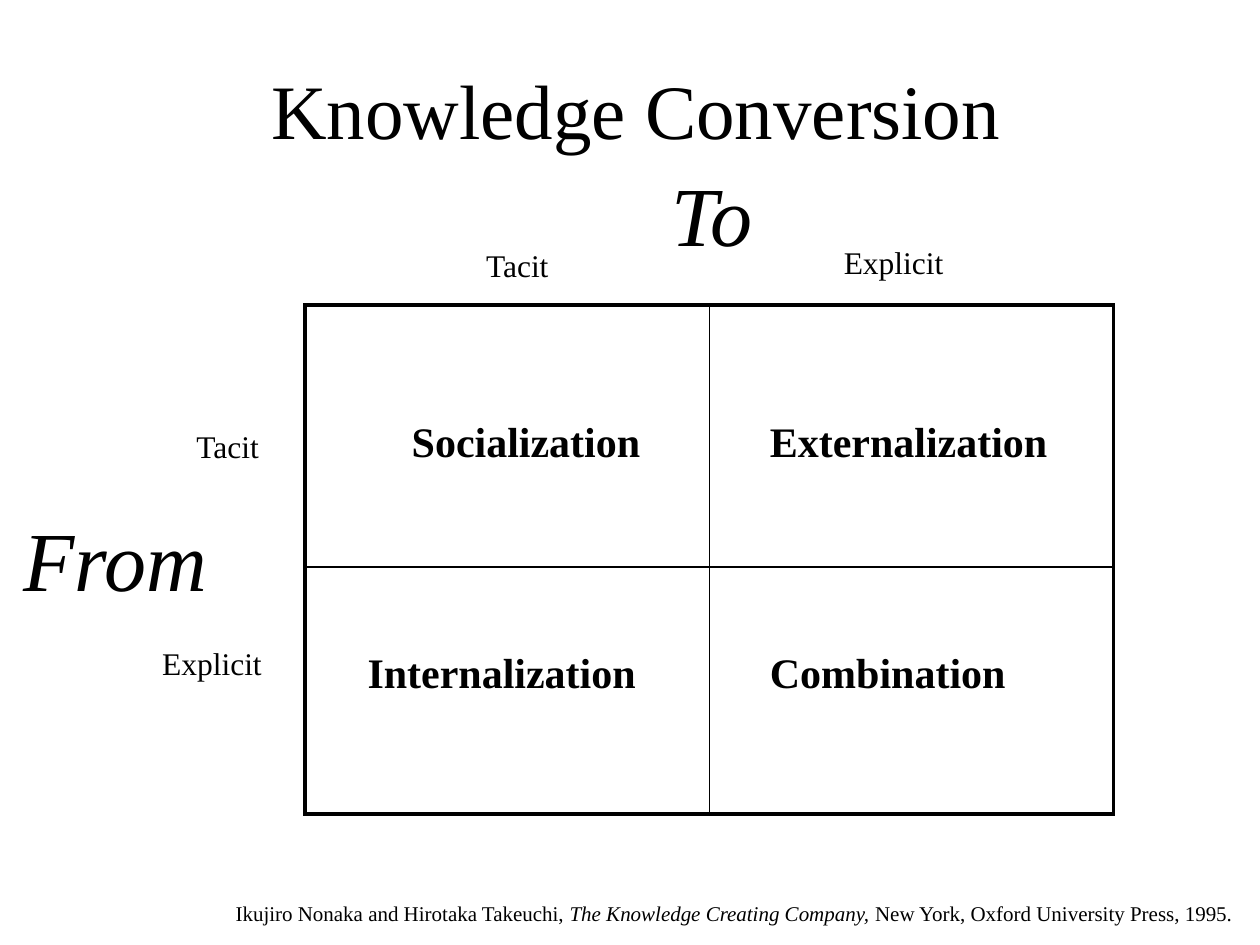
from lxml.etree import SubElement
from pptx import Presentation
from pptx.dml.color import RGBColor
from pptx.enum.text import MSO_ANCHOR, PP_ALIGN
from pptx.oxml.ns import qn
from pptx.util import Cm, Pt

FONT = "Times New Roman"
BLACK = "000000"
THICK, THIN = 2.25, 1

# text, left, top, width, height
AXIS_NAMES = [
    ("To", 13.28, 3.15, 2.5, 2.31),
    ("From", 0.23, 10.11, 4.47, 2.31),
]
COLUMN_TACIT = ("Tacit", 9.55, 5.05, 4.78, 0.81)
AXIS_VALUES = [
    ("Explicit", 16.76, 4.78, 5.46, 1.02),
    ("Tacit", 3.71, 8.48, 1.96, 1.02),
    ("Explicit", 3.02, 12.85, 3.3, 1.02),
]
CONVERSIONS = [
    ("Socialization", 8.05, 8.26, 5.11, 1.27),
    ("Externalization", 15.27, 8.26, 6.1, 1.27),
    ("Internalization", 7.16, 12.9, 5.92, 1.27),
    ("Combination", 15.27, 12.9, 5.51, 1.27),
]
CITATION = [
    ("Ikujiro Nonaka and Hirotaka Takeuchi,", False),
    (" The Knowledge Creating Company, ", True),
    ("New York, Oxford University Press, 1995.", False),
]


def color(value):
    return RGBColor.from_string(value)


def style(font, size, bold=False, italic=False):
    font.name = FONT
    font.size = Pt(size)
    font.bold = bold
    font.italic = italic
    font.color.rgb = color(BLACK)


def add_box(page, left, top, width, height):
    box = page.shapes.add_textbox(Cm(left), Cm(top), Cm(width), Cm(height))
    box.text_frame.word_wrap = True
    return box


def add_label(page, label, size, bold=False, italic=False):
    text, *place = label
    box = add_box(page, *place)
    box.text_frame.text = text
    para = box.text_frame.paragraphs[0]
    style(para.runs[0].font, size, bold, italic)
    return box


def add_title(page):
    box = add_label(page, ("Knowledge Conversion", 2.03, 0.61, 21.59, 3.18), 44)
    box.text_frame.vertical_anchor = MSO_ANCHOR.MIDDLE
    box.text_frame.paragraphs[0].alignment = PP_ALIGN.CENTER


def add_citation(page):
    para = add_box(page, 4.5, 18.03, 20.8, 0.76).text_frame.paragraphs[0]
    for text, italic in CITATION:
        span = para.add_run()
        span.text = text
        style(span.font, 12, italic=italic)


def set_borders(cell, widths):
    """Draw the left, right, top and bottom borders, widths in points."""
    properties = cell._tc.get_or_add_tcPr()
    for position, (side, width) in enumerate(zip("LRTB", widths)):
        line = properties.makeelement(qn(f"a:ln{side}"), {"w": str(Pt(width))})
        fill = SubElement(line, qn("a:solidFill"))
        SubElement(fill, qn("a:srgbClr"), val=BLACK)
        properties.insert(position, line)


def add_matrix(page):
    """Two by two grid with a thick frame and thin inner lines."""
    frame = page.shapes.add_table(2, 2, Cm(6.15), Cm(6.15), Cm(16.3), Cm(10.26))
    table = frame.table
    table.first_row = table.horz_banding = False
    for column in table.columns:
        column.width = Cm(8.15)
    for row, height in zip(table.rows, (5.28, 4.98)):
        row.height = Cm(height)
    for row in range(2):
        for column in range(2):
            cell = table.cell(row, column)
            cell.fill.background()
            across = (THIN, THICK) if column else (THICK, THIN)
            down = (THIN, THICK) if row else (THICK, THIN)
            set_borders(cell, across + down)


def main():
    deck = Presentation()
    deck.slide_width, deck.slide_height = Cm(25.4), Cm(19.05)
    page = deck.slides.add_slide(deck.slide_layouts[6])
    add_title(page)
    add_matrix(page)
    heading = add_label(page, COLUMN_TACIT, 18)
    heading.text_frame.paragraphs[0].line_spacing = 0.7
    for label in AXIS_VALUES:
        add_label(page, label, 18)
    for label in CONVERSIONS:
        add_label(page, label, 24, bold=True)
    for label in AXIS_NAMES:
        add_label(page, label, 48, italic=True)
    add_citation(page)
    deck.save("out.pptx")


if __name__ == "__main__":
    main()
